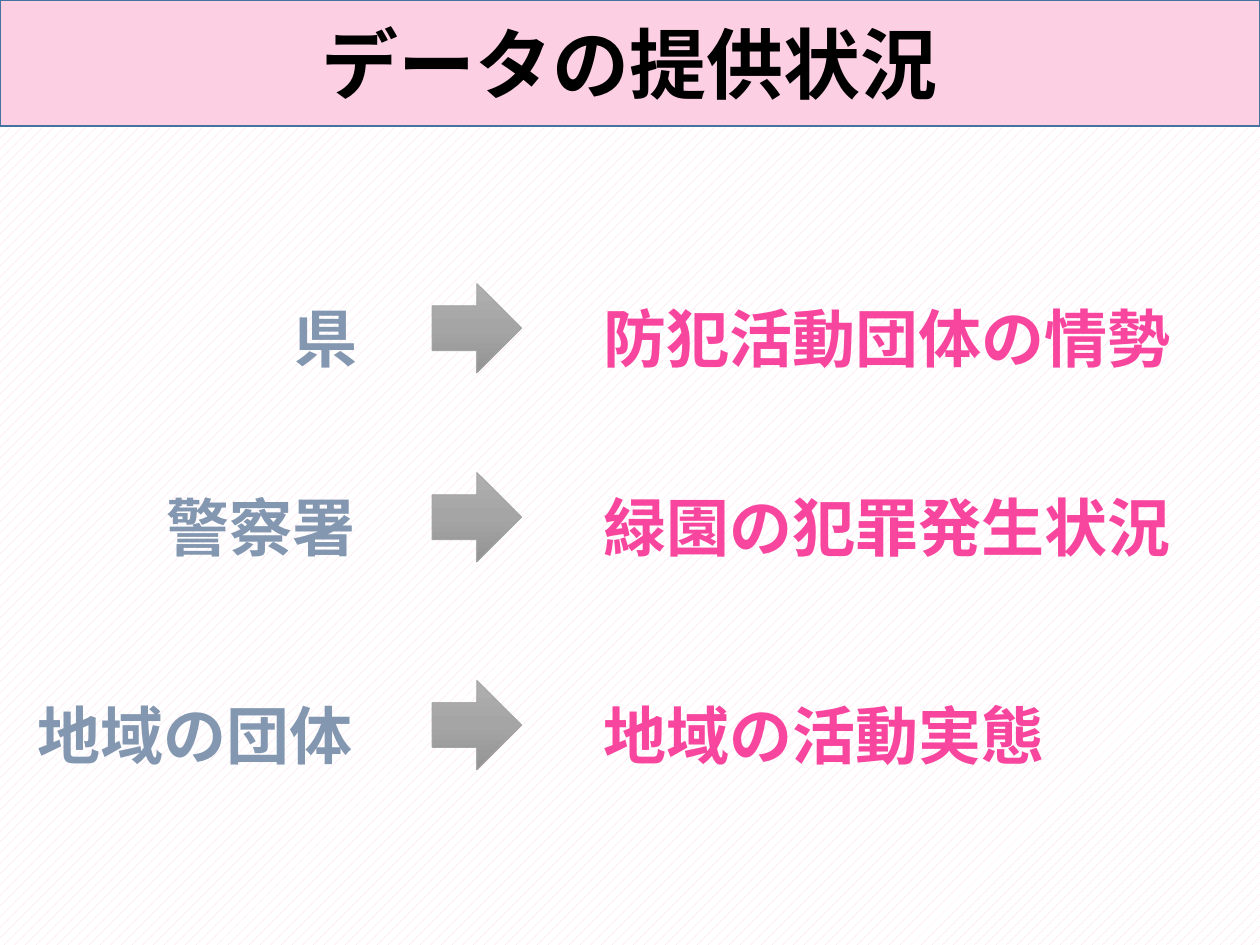
from copy import deepcopy
from dataclasses import dataclass

from lxml import etree
from pptx import Presentation
from pptx.dml.color import RGBColor
from pptx.enum.dml import MSO_PATTERN
from pptx.enum.shapes import MSO_SHAPE
from pptx.enum.text import MSO_ANCHOR, MSO_AUTO_SIZE, PP_ALIGN
from pptx.oxml.ns import qn
from pptx.slide import Slide
from pptx.util import Inches, Pt

RIGHT_ARROW = MSO_SHAPE.RIGHT_ARROW
DOTTED = MSO_PATTERN.PERCENT_20
CENTER = PP_ALIGN.CENTER
MIDDLE = MSO_ANCHOR.MIDDLE
FIT_SHAPE = MSO_AUTO_SIZE.SHAPE_TO_FIT_TEXT

PINK = RGBColor(0xFD, 0xCF, 0xE3)
HOT_PINK = RGBColor(0xF8, 0x46, 0x9F)
SLATE = RGBColor(0x84, 0x97, 0xB0)
BLUE = RGBColor(0x43, 0x73, 0x9E)
BLACK = RGBColor(0, 0, 0)
WHITE = RGBColor(0xFF, 0xFF, 0xFF)
GRAYS = (RGBColor(0xAF, 0xAF, 0xAF), RGBColor(0xA5, 0xA5, 0xA5),
         RGBColor(0x93, 0x93, 0x93))

BODY_FONT = "Noto Sans CJK JP"
TITLE_FONT = "Cambria"
TEXT_HEIGHT = 0.71
ARROW_LEFT, ARROW_SIZE, ARROW_RISE = 3.43, 0.71, 0.08
DATA_LEFT, DATA_WIDTH = 4.69, 4.96


@dataclass
class Provision:
    provider: str
    data: str
    left: float
    width: float
    top: float


PROVISIONS = [
    Provision("県", "防犯活動団体の情勢", 2.24, 0.94, 2.33),
    Provision("警察署", "緑園の犯罪発生状況", 1.22, 1.89, 3.83),
    Provision("地域の団体", "地域の活動実態", 0.2, 2.76, 5.48),
]


def add_label(page: Slide, text: str, left: float, top: float,
              width: float, color: RGBColor) -> None:
    box = page.shapes.add_textbox(Inches(left), Inches(top),
                                  Inches(width), Inches(TEXT_HEIGHT))
    frame = box.text_frame
    frame.word_wrap = True
    frame.auto_size = FIT_SHAPE
    frame.text = text
    font = frame.paragraphs[0].runs[0].font
    font.size, font.bold, font.name = Pt(36), True, BODY_FONT
    font.color.rgb = color
    east_asian = etree.SubElement(font._element, qn("a:ea"))
    east_asian.set("typeface", BODY_FONT)


def add_arrow(page: Slide, top: float) -> None:
    arrow = page.shapes.add_shape(RIGHT_ARROW, Inches(ARROW_LEFT), Inches(top),
                                  Inches(ARROW_SIZE), Inches(ARROW_SIZE))
    arrow.shadow.inherit = False
    arrow.line.color.rgb = GRAYS[1]
    arrow.line.width = Pt(0.5)
    arrow.fill.gradient()
    arrow.fill.gradient_angle = 270
    # The default gradient has two stops; a third goes between them
    stop_list = arrow._element.spPr.find(f".//{qn('a:gsLst')}")
    stop_list.insert(1, deepcopy(stop_list[0]))
    for index, (stop, gray) in enumerate(zip(arrow.fill.gradient_stops, GRAYS)):
        stop.position = index / 2
        stop.color.rgb = gray


def format_title(page: Slide) -> None:
    title = page.shapes.title
    title.left, title.top = Inches(0), Inches(0)
    title.width, title.height = Inches(10), Inches(1)
    title.fill.solid()
    title.fill.fore_color.rgb = PINK
    title.line.color.rgb = BLUE
    title.line.width = Pt(1)
    frame = title.text_frame
    frame.text = "データの提供状況"
    frame.vertical_anchor = MIDDLE
    para = frame.paragraphs[0]
    para.alignment = CENTER
    font = para.runs[0].font
    font.size, font.bold, font.name = Pt(44), True, TITLE_FONT
    font.color.rgb = BLACK
    # Thin white outline around the letters
    outline = etree.Element(qn("a:ln"), w=str(Pt(0.75)))
    fill = etree.SubElement(outline, qn("a:solidFill"))
    etree.SubElement(fill, qn("a:srgbClr"), val=str(WHITE))
    font._element.insert(0, outline)


def main() -> None:
    deck = Presentation()
    deck.slide_width, deck.slide_height = Inches(10), Inches(7.5)
    page = deck.slides.add_slide(deck.slide_layouts.get_by_name("Title Only"))

    # Patterned background
    background = page.background.fill
    background.patterned()
    background.pattern = DOTTED
    background.fore_color.rgb = PINK
    background.back_color.rgb = WHITE

    # Title band
    format_title(page)

    # Provider, arrow and data in each row
    for row in PROVISIONS:
        add_label(page, row.provider, row.left, row.top, row.width, SLATE)
        add_arrow(page, row.top - ARROW_RISE)
        add_label(page, row.data, DATA_LEFT, row.top, DATA_WIDTH, HOT_PINK)

    deck.save("out.pptx")


if __name__ == "__main__":
    main()
